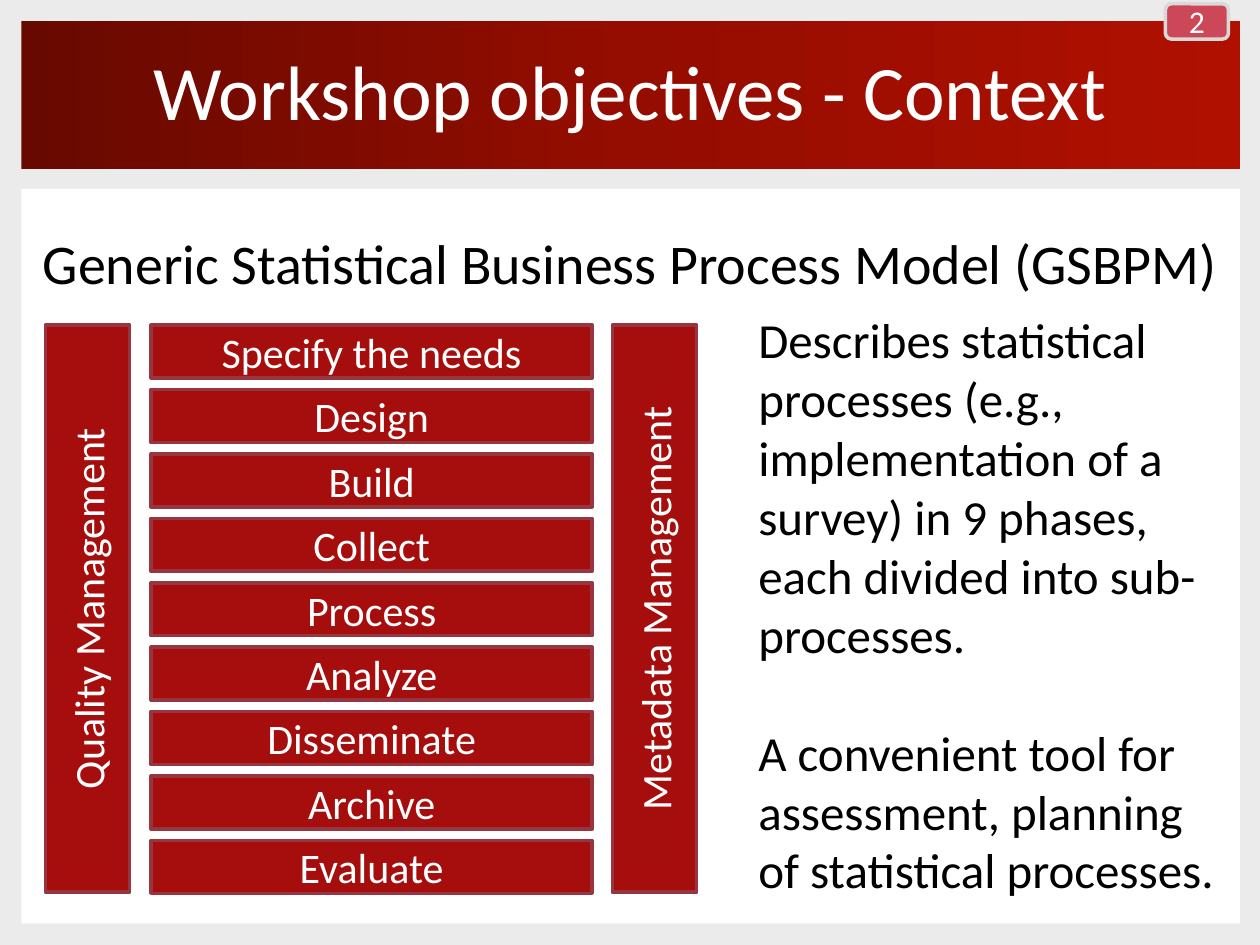
import copy

from pptx import Presentation
from pptx import util as u
from pptx.dml.color import RGBColor
from pptx.enum import shapes, text
from pptx.oxml import ns

WHITE, RED, RED_EDGE, GREY = "FFFFFF", "A60E0E", "973540", "D9D9D9"


def color(hex_string):
    return RGBColor.from_string(hex_string)


def add_box(kind, left, top, width, height, fill, line=None, label=None, size=24):
    shape = slide.shapes.add_shape(
        kind, u.Inches(left), u.Inches(top), u.Inches(width), u.Inches(height))
    shape.shadow.inherit = False
    shape.fill.solid()
    shape.fill.fore_color.rgb = color(fill)
    if line:
        shape.line.color.rgb = color(line)
        shape.line.width = u.Pt(2)
    else:
        shape.line.fill.background()
    if label:
        shape.text_frame.vertical_anchor = text.MSO_ANCHOR.MIDDLE
        paragraph = shape.text_frame.paragraphs[0]
        paragraph.alignment = text.PP_ALIGN.CENTER
        run = paragraph.add_run()
        run.text = label
        run.font.name = "Calibri"
        run.font.size = u.Pt(size)
        run.font.color.rgb = color(WHITE)
    return shape


presentation = Presentation()
presentation.slide_width = u.Inches(10)
presentation.slide_height = u.Inches(7.5)
slide = presentation.slides.add_slide(presentation.slide_layouts[1])
slide.background.fill.solid()
slide.background.fill.fore_color.rgb = color("EBEBEB")
title, body = slide.shapes.title, slide.placeholders[1]

# White content panel, behind the placeholders
panel = add_box(shapes.MSO_SHAPE.RECTANGLE, 0.17, 1.5, 9.67, 5.83, WHITE)
title._element.addprevious(panel._element)

# Title and subtitle placeholders
headings = [
    (title, "Workshop objectives - Context", 0.17, 1.17, 44, WHITE, 0.9),
    (body, "Generic Statistical Business Process Model (GSBPM)",
     1.5, 5.33, 32, "000000", 1.5),
]
for shape, words, top, height, size, font_color, spacing in headings:
    shape.left, shape.top = u.Inches(0.17), u.Inches(top)
    shape.width, shape.height = u.Inches(9.67), u.Inches(height)
    shape.text_frame.auto_size = text.MSO_AUTO_SIZE.NONE
    paragraph = shape.text_frame.paragraphs[0]
    paragraph.alignment = text.PP_ALIGN.CENTER
    paragraph.line_spacing = spacing
    paragraph.space_before = u.Pt(0)
    run = paragraph.add_run()
    run.text = words
    run.font.name = "Calibri"
    run.font.size = u.Pt(size)
    run.font.color.rgb = color(font_color)

# Subtitle without bullet or indent
properties = body.text_frame.paragraphs[0]._p.get_or_add_pPr()
properties.set("marL", "0")
properties.set("indent", "0")
properties.append(properties.makeelement(ns.qn("a:buNone"), {}))

# Title band with a three-stop gradient
title.text_frame.vertical_anchor = text.MSO_ANCHOR.MIDDLE
title.text_frame.margin_top = title.text_frame.margin_bottom = u.Inches(0.2)
title.fill.gradient()
title.fill.gradient_angle = 0
stop_list = title._element.spPr.find(".//" + ns.qn("a:gsLst"))
stop_list.append(copy.deepcopy(stop_list[0]))
stops = zip(title.fill.gradient_stops, (0, 0.5, 1), ("680900", "940D00", "B01000"))
for stop, position, stop_color in stops:
    stop.position = position
    stop.color.rgb = color(stop_color)

# Description on the right
description = slide.shapes.add_textbox(
    u.Inches(5.92), u.Inches(2.41), u.Inches(3.92), u.Inches(4.81))
frame = description.text_frame
frame.word_wrap = True
sentences = [
    "Describes statistical processes (e.g., implementation of a survey) "
    "in 9 phases, each divided into sub-processes.",
    "A convenient tool for assessment, planning of statistical processes.",
]
for index, sentence in enumerate(sentences):
    paragraph = frame.add_paragraph() if index else frame.paragraphs[0]
    paragraph.space_before = u.Pt(34 * index)
    run = paragraph.add_run()
    run.text = sentence
    run.font.name = "Calibri"
    run.font.size = u.Pt(28)
    run.font.color.rgb = color("000000")

# Nine process phases
phases = ["Specify the needs", "Design", "Build", "Collect", "Process",
          "Analyze", "Disseminate", "Archive", "Evaluate"]
pitch = (6.67 - 2.58) / (len(phases) - 1)
for index, phase in enumerate(phases):
    add_box(shapes.MSO_SHAPE.RECTANGLE, 1.2, 2.58 + index * pitch, 3.5, 0.42,
            RED, RED_EDGE, phase)

# Management columns with upward text
for left, label in [(4.86, "Metadata Management"), (0.36, "Quality Management")]:
    column = add_box(shapes.MSO_SHAPE.RECTANGLE, left, 2.58, 0.67, 4.5,
                     RED, RED_EDGE, label)
    column.text_frame._txBody.bodyPr.set("vert", "vert270")

# Page number badge
add_box(shapes.MSO_SHAPE.ROUNDED_RECTANGLE, 9.25, 0.03, 0.5, 0.28,
        "CC4757", GREY, "2", 18)

presentation.save("out.pptx")
